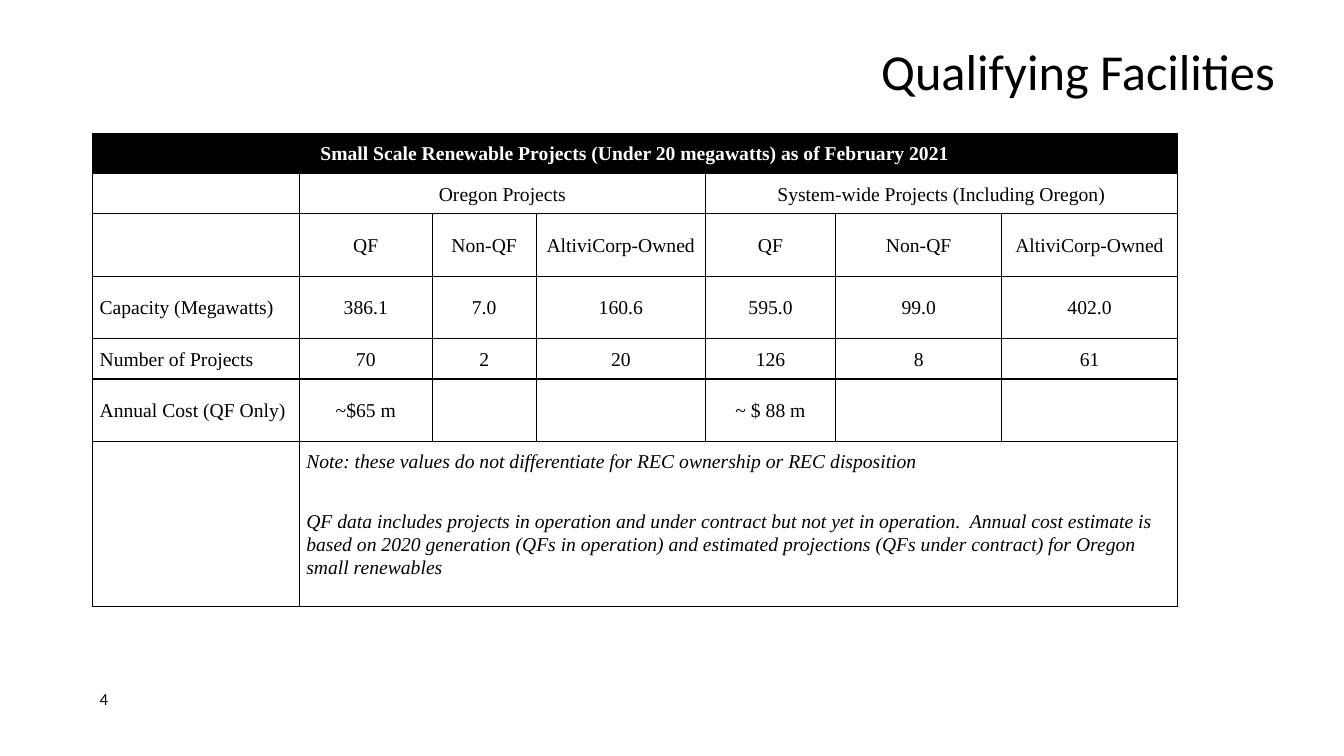
import pptx
import pptx.dml.color
import pptx.enum.text
import pptx.oxml
import pptx.oxml.ns
import pptx.util
from dataclasses import dataclass

Pt = pptx.util.Pt
ALIGN = pptx.enum.text.PP_ALIGN
MIDDLE = pptx.enum.text.MSO_ANCHOR.MIDDLE


@dataclass(frozen=True)
class Theme:
    ink: str = "000000"
    paper: str = "FFFFFF"
    heading_font: str = "Calibri"
    table_font: str = "Times New Roman"
    title_size: int = 36
    table_size: int = 14
    number_size: int = 12


theme = Theme()


def write(frame, text, font, size, color=theme.ink, align=ALIGN.LEFT, spacing=1.0,
          bold=False, italic=False):
    frame.word_wrap = True
    paragraph = frame.paragraphs[0]
    paragraph.alignment = align
    paragraph.line_spacing = spacing
    run = paragraph.add_run()
    run.text = text
    run.font.name = font
    run.font.size = Pt(size)
    run.font.bold = bold
    run.font.italic = italic
    run.font.color.rgb = pptx.dml.color.RGBColor.from_string(color)


def add_borders(cell, hidden):
    """Draw 1 pt lines on all sides of a cell except the hidden ones."""
    properties = cell._tc.get_or_add_tcPr()
    for position, side in enumerate("LRTB"):
        paint = ("<a:noFill/>" if side in hidden else
                 f'<a:solidFill><a:srgbClr val="{theme.ink}"/></a:solidFill>')
        properties.insert(position, pptx.oxml.parse_xml(
            f'<a:ln{side} {pptx.oxml.ns.nsdecls("a")} w="{Pt(1)}">{paint}</a:ln{side}>'))


deck = pptx.Presentation()
deck.slide_width, deck.slide_height = Pt(960), Pt(540)
slide = deck.slides.add_slide(deck.slide_layouts[6])

title = slide.shapes.add_textbox(Pt(431.3), Pt(10.8), Pt(486.7), Pt(84.2)).text_frame
title.vertical_anchor = MIDDLE
write(title, "Qualifying Facilities", theme.heading_font, theme.title_size,
      align=ALIGN.RIGHT, spacing=0.9)

page_number = slide.shapes.add_textbox(Pt(64.1), Pt(488.2), Pt(28.8), Pt(21.6)).text_frame
write(page_number, "4", theme.heading_font, theme.number_size)

owners = ["QF", "Non-QF", "AltiviCorp-Owned"]
rows = [
    ["Small Scale Renewable Projects (Under 20 megawatts) as of February 2021"],
    ["", "Oregon Projects", "", "", "System-wide Projects (Including Oregon)"],
    ["", *owners, *owners],
    ["Capacity (Megawatts)", "386.1", "7.0", "160.6", "595.0", "99.0", "402.0"],
    ["Number of Projects", "70", "2", "20", "126", "8", "61"],
    ["Annual Cost (QF Only)", "~$65 m", "", "", "~ $ 88 m"],
    ["", "Note: these values do not differentiate for REC ownership or REC disposition"],
    ["", "QF data includes projects in operation and under contract but not yet in "
         "operation.\u00a0 Annual cost estimate is based on 2020 generation (QFs in operation) "
         "and estimated projections (QFs under contract) for Oregon small renewables"],
]
widths = [147.6, 95, 74.2, 121, 92.9, 118.8, 125.3]
heights = [28.8, 28.8, 44.6, 44.6, 28.8, 44.6, 28.1, 90]
NOTE, DETAIL = 6, 7

projects = slide.shapes.add_table(len(rows), len(widths), Pt(66.2), Pt(95.2),
                                  Pt(sum(widths)), Pt(sum(heights))).table
projects.first_row = projects.horz_banding = False
for column, width in zip(projects.columns, widths):
    column.width = Pt(width)
for row, height in zip(projects.rows, heights):
    row.height = Pt(height)

spans = [(0, 0, 0, 6), (1, 1, 1, 3), (1, 4, 1, 6),
         (NOTE, 0, DETAIL, 0), (NOTE, 1, NOTE, 6), (DETAIL, 1, DETAIL, 6)]
for top, left, bottom, right in spans:
    projects.cell(top, left).merge(projects.cell(bottom, right))

for r, texts in enumerate(rows):
    for c in range(len(widths)):
        cell = projects.cell(r, c)
        heading = r == 0
        note = r >= NOTE
        cell.margin_left = cell.margin_right = Pt(5)
        cell.margin_top = cell.margin_bottom = Pt(0)
        cell.vertical_anchor = MIDDLE
        cell.fill.solid()
        cell.fill.fore_color.rgb = pptx.dml.color.RGBColor.from_string(
            theme.ink if heading else theme.paper)
        add_borders(cell, {NOTE: "B", DETAIL: "T"}.get(r, "") if c else "")
        if c < len(texts) and texts[c]:
            label = note or (c == 0 and not heading)
            write(cell.text_frame, texts[c], theme.table_font, theme.table_size,
                  color=theme.paper if heading else theme.ink,
                  align=ALIGN.LEFT if label else ALIGN.CENTER,
                  spacing=1.07, bold=heading, italic=note)

deck.save("out.pptx")
